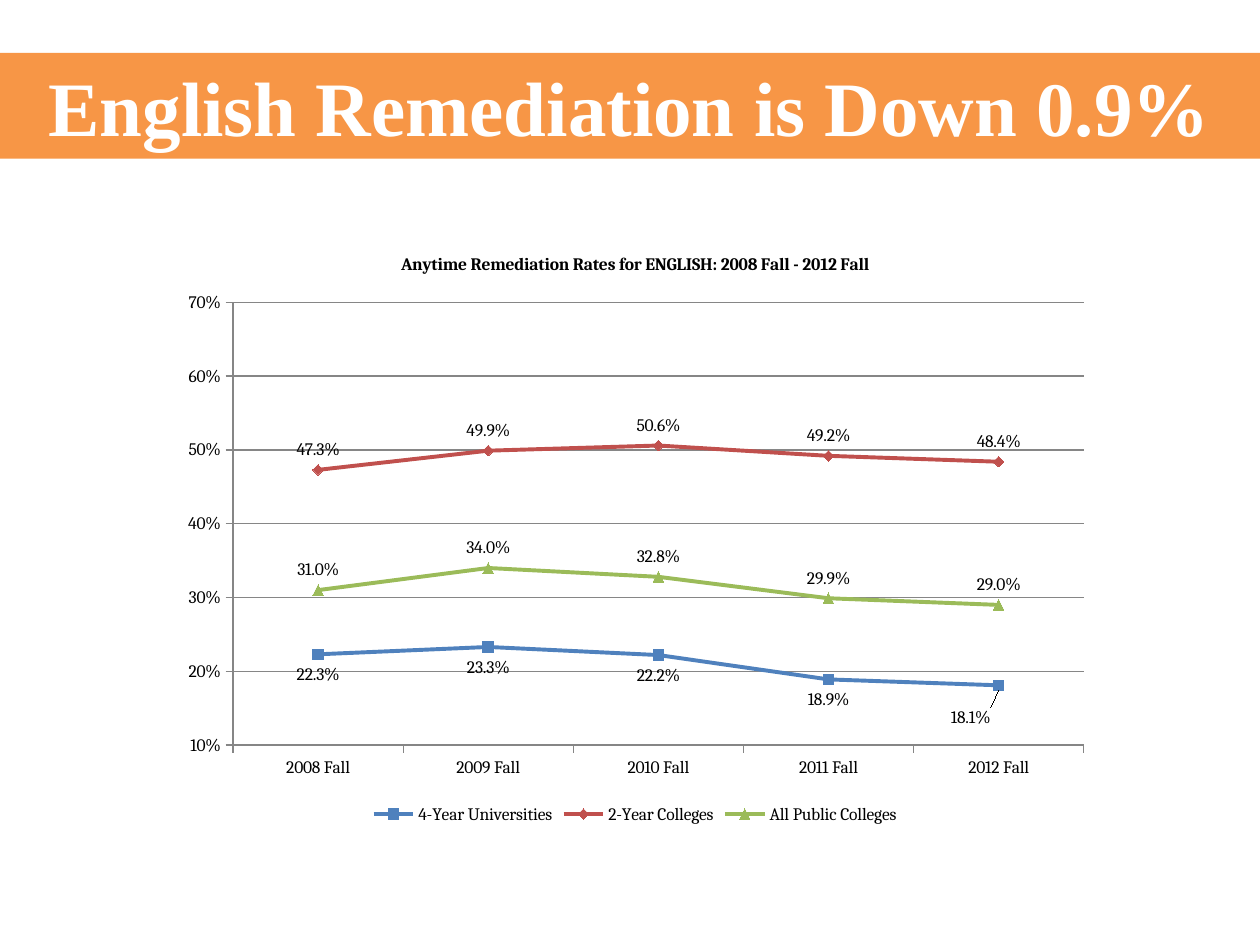
from lxml.etree import SubElement
from pptx import Presentation
from pptx.chart.data import CategoryChartData
from pptx.dml.color import RGBColor
from pptx.enum.chart import (XL_CHART_TYPE, XL_LABEL_POSITION, XL_LEGEND_POSITION,
                             XL_MARKER_STYLE, XL_TICK_MARK)
from pptx.enum.shapes import MSO_SHAPE
from pptx.enum.text import MSO_ANCHOR, PP_ALIGN
from pptx.oxml.ns import qn
from pptx.util import Inches, Pt

COLOURS = {
    "banner": "F79646", "banner_text": "FFFFFF", "text": "000000", "grid": "868686",
    "universities": "4F81BD", "colleges": "C0504D", "public": "9BBB59",
}
TERMS = [f"{year} Fall" for year in range(2008, 2013)]
RATES = [
    ("4-Year Universities", (0.223, 0.233, 0.222, 0.189, 0.181),
     "universities", XL_MARKER_STYLE.SQUARE, XL_LABEL_POSITION.BELOW),
    ("2-Year Colleges", (0.473, 0.499, 0.506, 0.492, 0.484),
     "colleges", XL_MARKER_STYLE.DIAMOND, XL_LABEL_POSITION.ABOVE),
    ("All Public Colleges", (0.31, 0.34, 0.328, 0.299, 0.29),
     "public", XL_MARKER_STYLE.TRIANGLE, XL_LABEL_POSITION.ABOVE),
]


def colour(name):
    """Return the named colour."""
    return RGBColor.from_string(COLOURS[name])


def apply(target, **formats):
    """Set each format value on the target."""
    for name, value in formats.items():
        setattr(target, name, value)


def style_font(font, name, size, shade, bold=False):
    """Set the typeface, size, colour and weight of a font."""
    apply(font, name=name, size=Pt(size), bold=bold)
    font.color.rgb = colour(shade)


def style_line(line, shade, width):
    """Set the colour and width of a line."""
    line.color.rgb = colour(shade)
    line.width = Pt(width)


def add_layout(before, **settings):
    """Insert a manual chart layout after the given element."""
    layout = before.makeelement(qn("c:layout"), {})
    manual = SubElement(layout, qn("c:manualLayout"))
    for name, value in settings.items():
        SubElement(manual, qn(f"c:{name}")).set("val", str(value))
    before.addnext(layout)


def place_plot(chart, x, y, w, h):
    """Fix the inner plot area as fractions of the chart."""
    plot_area = chart.plots[0]._element.getparent()
    for layout in plot_area.findall(qn("c:layout")):
        plot_area.remove(layout)
    first = plot_area[0]
    add_layout(first, layoutTarget="inner", xMode="edge", yMode="edge", x=x, y=y, w=w, h=h)
    first.getprevious() if first.getprevious() is not None else first.getnext().addnext(first)


def add_banner(page, left, top, width, height):
    """Draw the headline band."""
    box = page.shapes.add_shape(MSO_SHAPE.RECTANGLE, left, top, width, height)
    box.shadow.inherit = False
    box.fill.solid()
    box.fill.fore_color.rgb = colour("banner")
    box.line.fill.background()
    apply(box.text_frame, word_wrap=True, vertical_anchor=MSO_ANCHOR.MIDDLE)
    para = box.text_frame.paragraphs[0]
    para.alignment = PP_ALIGN.CENTER
    span = para.add_run()
    span.text = "English Remediation is Down 0.9%"
    style_font(span.font, "Times New Roman", 44, "banner_text", True)


def style_axes(chart):
    """Format the term axis and the rate axis."""
    apply(chart.value_axis, minimum_scale=0.1, maximum_scale=0.7, major_unit=0.1,
          has_major_gridlines=True)
    apply(chart.value_axis.tick_labels, number_format="0%", number_format_is_linked=False)
    style_line(chart.value_axis.major_gridlines.format.line, "grid", 0.75)
    for axis in (chart.category_axis, chart.value_axis):
        apply(axis, major_tick_mark=XL_TICK_MARK.OUTSIDE, minor_tick_mark=XL_TICK_MARK.NONE)
        style_line(axis.format.line, "grid", 0.75)
        style_font(axis.tick_labels.font, "Cambria", 10, "text")


def style_series(series, shade, marker, position):
    """Format one rate line with its markers and labels."""
    series.smooth = False
    style_line(series.format.line, shade, 2.25)
    apply(series.marker, style=marker, size=6)
    series.marker.format.fill.solid()
    series.marker.format.fill.fore_color.rgb = colour(shade)
    style_line(series.marker.format.line, shade, 0.75)
    labels = series.data_labels
    apply(labels, show_value=True, position=position, number_format="0.0%",
          number_format_is_linked=False)
    style_font(labels.font, "Cambria", 10, "text")


def add_rate_chart(page, left, top, width, height):
    """Draw the line chart of remediation rates."""
    data = CategoryChartData(number_format="0.0%")
    data.categories = TERMS
    for name, values, *_ in RATES:
        data.add_series(name, values)
    chart = page.shapes.add_chart(
        XL_CHART_TYPE.LINE_MARKERS, left, top, width, height, data).chart
    style_font(chart.font, "Cambria", 10, "text")
    apply(chart, has_title=True, has_legend=True)
    span = chart.chart_title.text_frame.paragraphs[0].add_run()
    span.text = "Anytime Remediation Rates for ENGLISH: 2008 Fall - 2012 Fall"
    style_font(span.font, "Cambria", 10, "text", True)
    apply(chart.legend, position=XL_LEGEND_POSITION.BOTTOM, include_in_layout=False)
    style_font(chart.legend.font, "Cambria", 10, "text")
    style_axes(chart)
    plot = chart.plots[0]
    plot.vary_by_categories = False
    for series, (_, _, shade, marker, position) in zip(plot.series, RATES):
        style_series(series, shade, marker, position)
    universities = plot.series[0]
    universities.points[len(TERMS) - 1].data_label.position = XL_LABEL_POSITION.BELOW
    moved = universities.data_labels._element.find(qn("c:dLbl"))
    add_layout(moved.find(qn("c:idx")), x=-0.03, y=0.02)
    place_plot(chart, 0.07, 0.12, 0.91, 0.74)


def main():
    """Build and save the deck."""
    deck = Presentation()
    apply(deck, slide_width=Inches(10), slide_height=Inches(7.5))
    page = deck.slides.add_slide(deck.slide_layouts[6])
    add_banner(page, Inches(0), Inches(0.42), deck.slide_width, Inches(0.84))
    add_rate_chart(page, Inches(1.33), Inches(1.83), Inches(7.42), Inches(4.75))
    deck.save("out.pptx")


if __name__ == "__main__":
    main()
